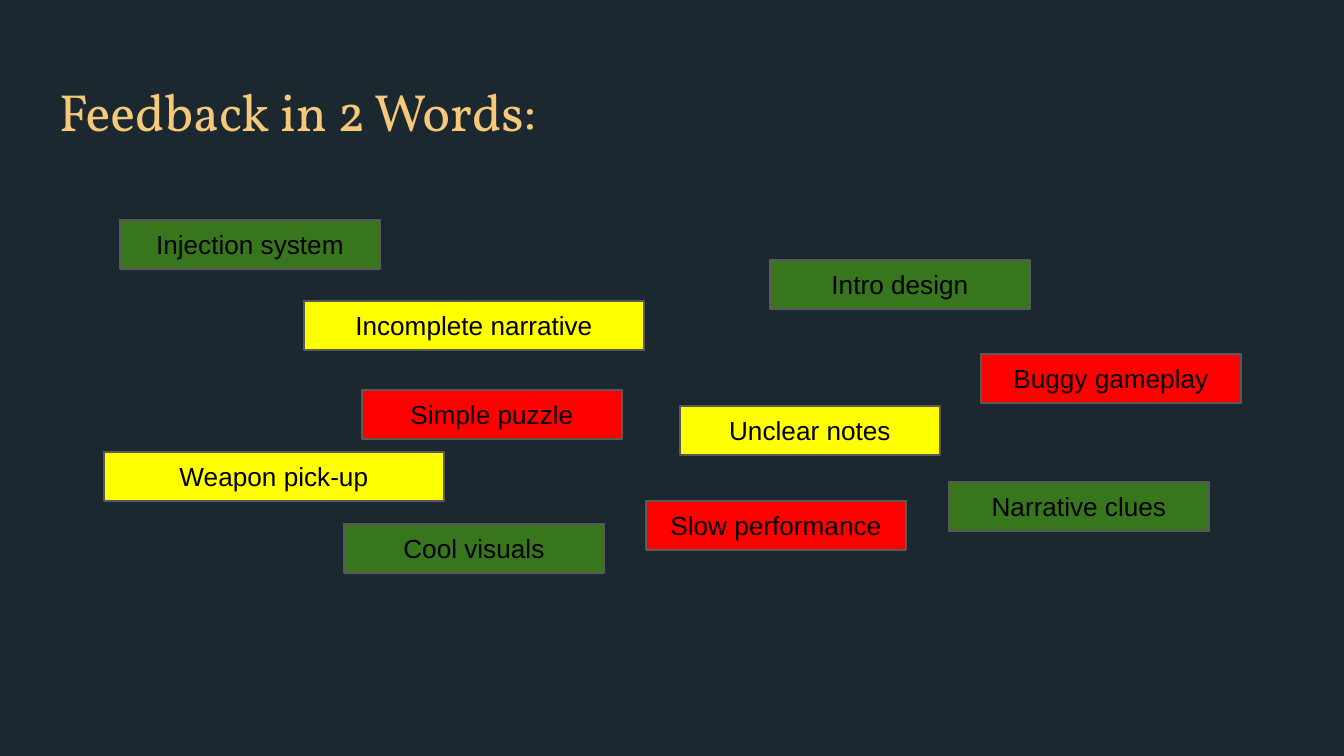
from dataclasses import dataclass
from typing import Any

from pptx import Presentation
from pptx.dml.color import RGBColor
from pptx.enum.shapes import MSO_SHAPE
from pptx.enum.text import MSO_ANCHOR, PP_ALIGN
from pptx.util import Emu, Pt

EMU_PER_PX = 914400 / 134.4
PAGE_WIDTH, PAGE_HEIGHT = 1344, 756
TAG_WIDTH, WIDE_TAG_WIDTH, TAG_HEIGHT = 260, 340, 49
INSET = 13


@dataclass(frozen=True)
class Theme:
    background: str = "1B2830"
    heading: str = "F5C87A"
    text: str = "000000"
    outline: str = "595959"
    good: str = "38761D"
    mixed: str = "FFFF00"
    bad: str = "FF0000"
    heading_font: str = "Vollkorn"
    tag_font: str = "Arial"
    heading_size: int = 28
    tag_size: int = 14
    outline_width: float = 0.75


THEME = Theme()


@dataclass(frozen=True)
class Tag:
    label: str
    left: int
    top: int
    color: str
    width: int = TAG_WIDTH


TAGS = [
    Tag("Injection system", 120, 220, THEME.good),
    Tag("Intro design", 770, 260, THEME.good),
    Tag("Incomplete narrative", 304, 301, THEME.mixed, WIDE_TAG_WIDTH),
    Tag("Unclear notes", 680, 406, THEME.mixed),
    Tag("Simple puzzle", 362, 390, THEME.bad),
    Tag("Cool visuals", 344, 524, THEME.good),
    Tag("Weapon pick-up", 104, 452, THEME.mixed, WIDE_TAG_WIDTH),
    Tag("Buggy gameplay", 981, 354, THEME.bad),
    Tag("Narrative clues", 949, 482, THEME.good),
    Tag("Slow performance", 646, 501, THEME.bad),
]


def px(length: int) -> Emu:
    return Emu(round(length * EMU_PER_PX))


def apply_format(target: Any, values: dict[str, Any]) -> None:
    for name, value in values.items():
        setattr(target, name, value)


def paint(fill: Any, color: str) -> None:
    fill.solid()
    fill.fore_color.rgb = RGBColor.from_string(color)


def write_text(box: Any, text: str, font: str, size: int, color: str,
               align: PP_ALIGN, anchor: MSO_ANCHOR) -> None:
    frame = box.text_frame
    sides = ("left", "top", "right", "bottom")
    margins = {f"margin_{side}": px(INSET) for side in sides}
    apply_format(frame, {"word_wrap": True, "vertical_anchor": anchor, **margins})
    para = frame.paragraphs[0]
    para.alignment = align
    span = para.add_run()
    span.text = text
    apply_format(span.font, {"name": font, "size": Pt(size)})
    span.font.color.rgb = RGBColor.from_string(color)


def draw_heading(page: Any, text: str) -> None:
    box = page.shapes.add_textbox(px(46), px(66), px(1253), px(85))
    write_text(box, text, THEME.heading_font, THEME.heading_size, THEME.heading,
               PP_ALIGN.LEFT, MSO_ANCHOR.TOP)


def draw_tag(page: Any, tag: Tag) -> None:
    box = page.shapes.add_shape(MSO_SHAPE.RECTANGLE, px(tag.left), px(tag.top),
                                px(tag.width), px(TAG_HEIGHT))
    box.shadow.inherit = False
    paint(box.fill, tag.color)
    paint(box.line.fill, THEME.outline)
    box.line.width = Pt(THEME.outline_width)
    write_text(box, tag.label, THEME.tag_font, THEME.tag_size, THEME.text,
               PP_ALIGN.CENTER, MSO_ANCHOR.MIDDLE)


def main() -> None:
    # Page
    deck = Presentation()
    apply_format(deck, {"slide_width": px(PAGE_WIDTH), "slide_height": px(PAGE_HEIGHT)})
    page = deck.slides.add_slide(deck.slide_layouts[6])
    paint(page.background.fill, THEME.background)

    # Heading and feedback tags
    draw_heading(page, "Feedback in 2 Words:")
    for tag in TAGS:
        draw_tag(page, tag)

    deck.save("out.pptx")


if __name__ == "__main__":
    main()
